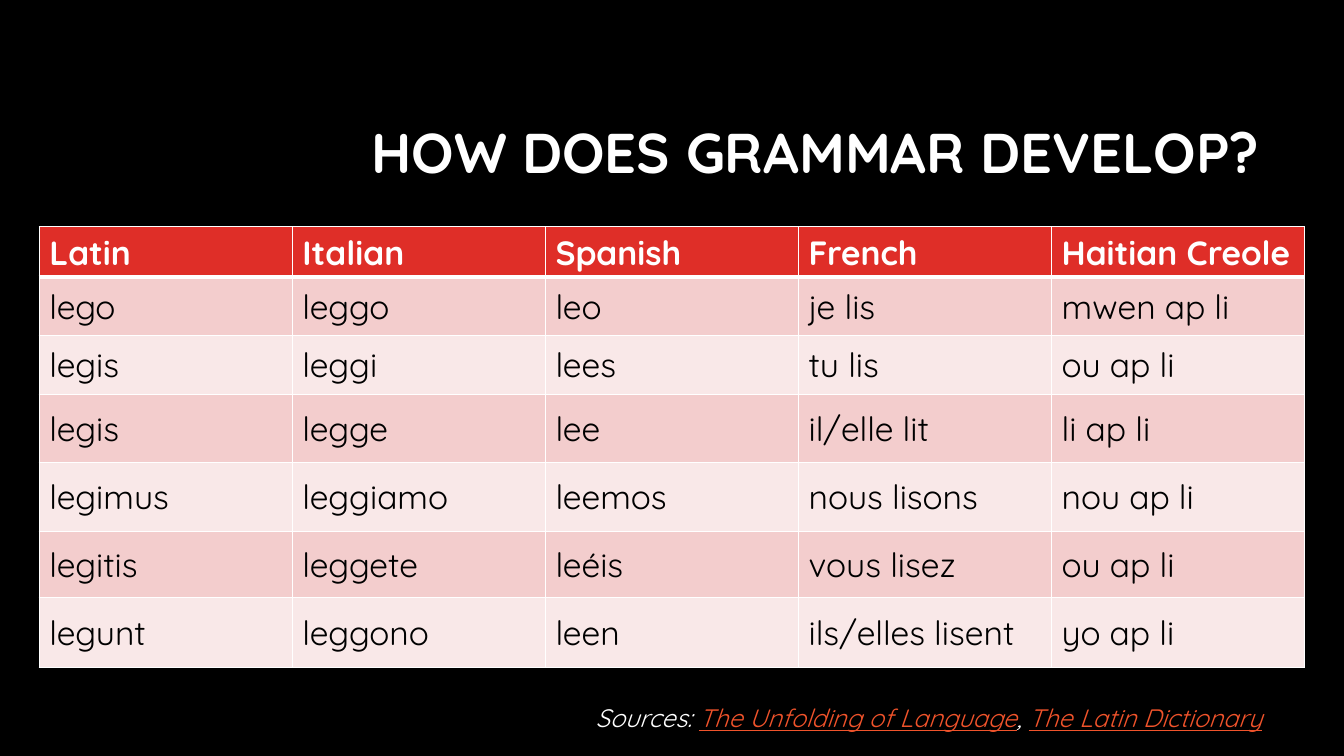
from lxml.etree import SubElement
from pptx import Presentation
from pptx.dml.color import RGBColor
from pptx.enum.text import MSO_ANCHOR as Anchor, PP_ALIGN as Align
from pptx.oxml.ns import qn
from pptx.util import Inches, Pt

FONT = "Quicksand"
COLORS = {
    "background": "000000",
    "light": "FFFFFF",
    "dark": "000000",
    "header": "DF2E28",
    "odd_row": "F3CDCD",
    "even_row": "F9E8E8",
    "source": "F0532B",
}
CONJUGATIONS = [
    ["Latin", "Italian", "Spanish", "French", "Haitian Creole"],
    ["lego", "leggo", "leo", "je lis", "mwen ap li"],
    ["legis", "leggi", "lees", "tu lis", "ou ap li"],
    ["legis", "legge", "lee", "il/elle lit", "li ap li"],
    ["legimus", "leggiamo", "leemos", "nous lisons", "nou ap li"],
    ["legitis", "leggete", "leéis", "vous lisez", "ou ap li"],
    ["legunt", "leggono", "leen", "ils/elles lisent", "yo ap li"],
]
ROW_HEIGHTS = [0.45, 0.58, 0.58, 0.68, 0.68, 0.66, 0.69]
COLUMN_WIDTH = 2.51


def color(name):
    return RGBColor.from_string(COLORS[name])


def set_font(font, size, color_name, bold=False, italic=False):
    font.name = FONT
    font.size = Pt(size)
    font.bold = bold
    font.italic = italic
    font.color.rgb = color(color_name)


def set_borders(cell, top=1, bottom=1):
    properties = cell._tc.get_or_add_tcPr()
    widths = {"a:lnL": 1, "a:lnR": 1, "a:lnT": top, "a:lnB": bottom}
    for position, (side, width) in enumerate(widths.items()):
        line = SubElement(properties, qn(side), w=str(Pt(width)))
        fill = SubElement(line, qn("a:solidFill"))
        SubElement(fill, qn("a:srgbClr"), val=COLORS["light"])
        properties.insert(position, line)  # borders come before the fill


def add_title(slide, text):
    title = slide.shapes.title
    title.left, title.top = Inches(3.17), Inches(0.84)
    title.width, title.height = Inches(9.42), Inches(1.41)
    title.text_frame.text = text
    title.text_frame.vertical_anchor = Anchor.MIDDLE
    heading = title.text_frame.paragraphs[0]
    heading.alignment = Align.RIGHT
    heading.line_spacing = 0.9
    set_font(heading.font, 40, "light", bold=True)


def fill_cell(cell, text, row):
    is_header = row == 0
    cell.text = text
    cell.vertical_anchor = Anchor.MIDDLE
    set_font(cell.text_frame.paragraphs[0].font, 24,
             "light" if is_header else "dark", bold=is_header)
    cell.fill.solid()
    fill_name = "header" if is_header else "odd_row" if row % 2 else "even_row"
    cell.fill.fore_color.rgb = color(fill_name)
    set_borders(cell, top=3 if row == 1 else 1, bottom=3 if is_header else 1)


def add_conjugation_table(slide):
    languages = len(CONJUGATIONS[0])
    table = slide.shapes.add_table(
        len(CONJUGATIONS), languages, Inches(0.39), Inches(2.25),
        Inches(COLUMN_WIDTH * languages), Inches(sum(ROW_HEIGHTS))).table
    for column in table.columns:
        column.width = Inches(COLUMN_WIDTH)
    for row, (height, forms) in enumerate(zip(ROW_HEIGHTS, CONJUGATIONS)):
        table.rows[row].height = Inches(height)
        for column, form in enumerate(forms):
            fill_cell(table.cell(row, column), form, row)


def add_sources(slide):
    box = slide.shapes.add_textbox(
        Inches(5.81), Inches(6.92), Inches(7.11), Inches(0.4))
    box.text_frame.word_wrap = True
    credits = box.text_frame.paragraphs[0]
    for text, is_source in [("Sources: ", False),
                            ("The Unfolding of Language", True),
                            (", ", False),
                            ("The Latin Dictionary", True)]:
        run = credits.add_run()
        run.text = text
        set_font(run.font, 18, "source" if is_source else "light", italic=True)
        run.font.underline = is_source


def main():
    prs = Presentation()
    prs.slide_width, prs.slide_height = Inches(13.33), Inches(7.5)
    slide = prs.slides.add_slide(prs.slide_layouts[5])
    slide.background.fill.solid()
    slide.background.fill.fore_color.rgb = color("background")

    add_title(slide, "HOW DOES GRAMMAR DEVELOP?")
    add_sources(slide)
    add_conjugation_table(slide)
    prs.save("out.pptx")


if __name__ == "__main__":
    main()
